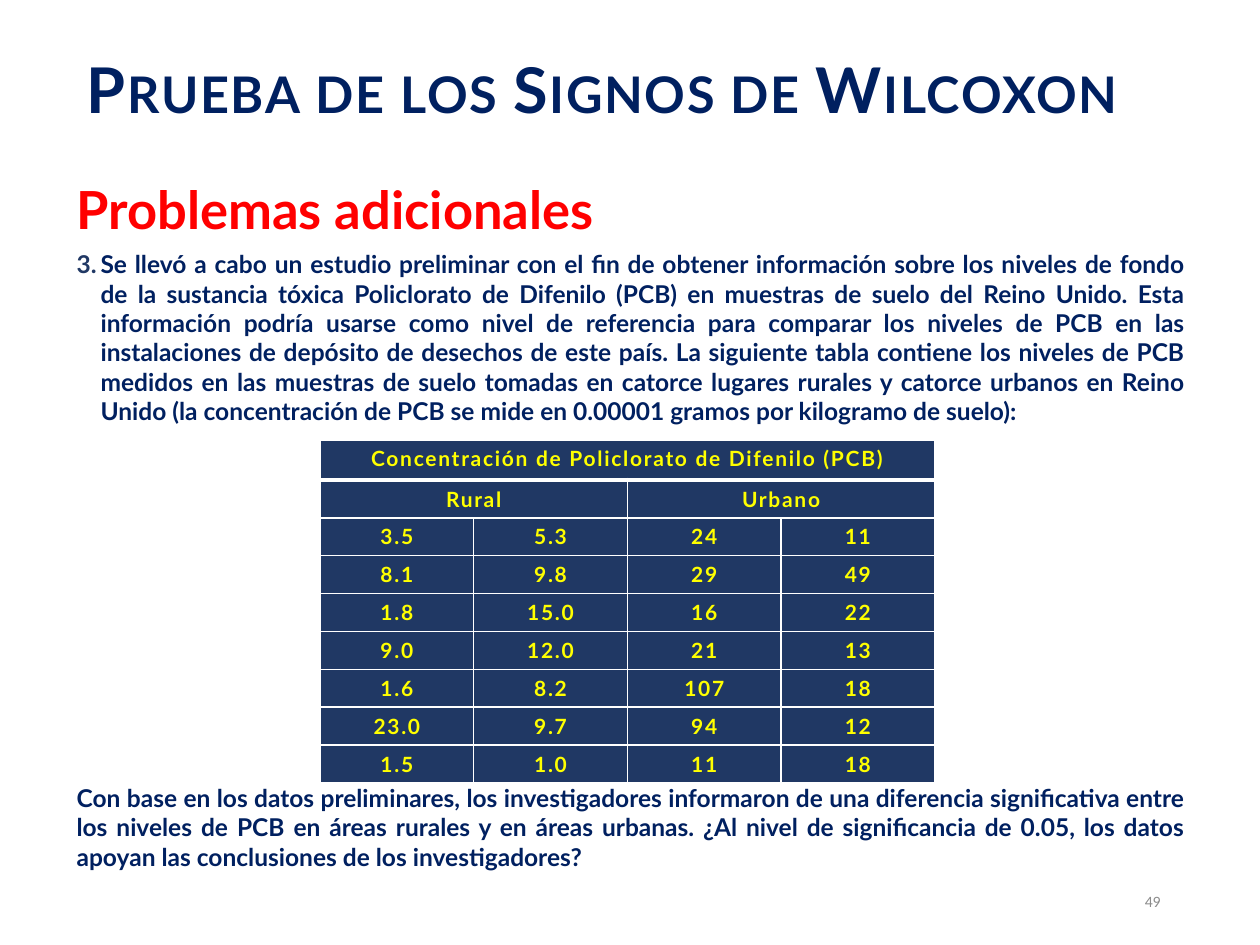
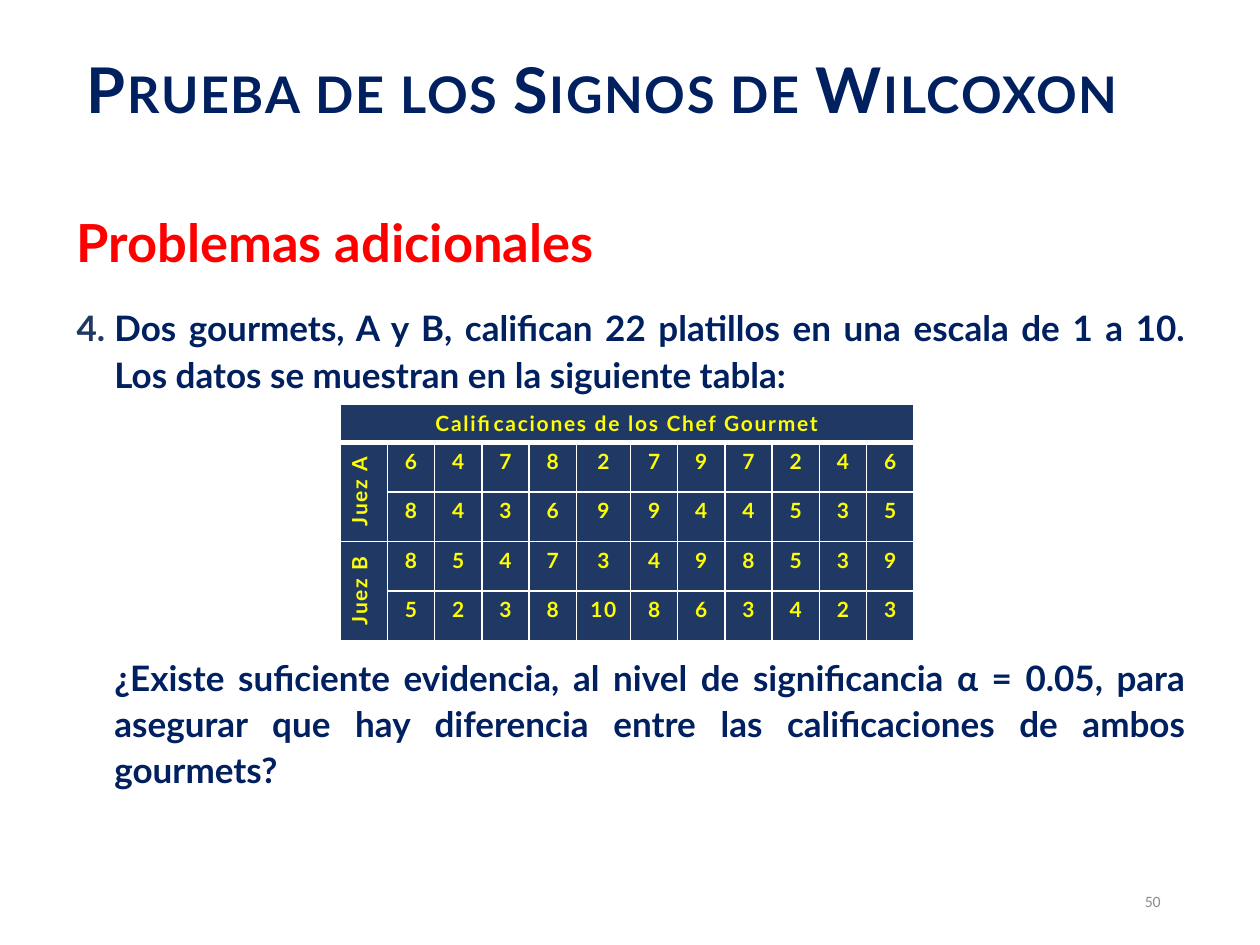
from dataclasses import dataclass

from lxml.etree import SubElement
from pptx import Presentation
from pptx.dml.color import RGBColor
from pptx.enum.text import MSO_ANCHOR, MSO_AUTO_SIZE, PP_ALIGN
from pptx.oxml.ns import qn
from pptx.util import Inches, Pt


@dataclass(frozen=True)
class Theme:
    font: str = "Lato"
    number_font: str = "Calibri"
    navy: str = "002060"
    panel: str = "203864"
    red: str = "FF0000"
    yellow: str = "FFFF00"
    white: str = "FFFFFF"
    grey: str = "8C8C8C"
    title: int = 36
    heading: int = 30
    cell: int = 12
    footer: int = 9
    thin: int = 1
    thick: int = 3


GRID_COLS, GRID_ROWS = 100, 75
TITLE = "Prueba de los Signos de Wilcoxon"
HEADING = "Problemas adicionales"


class Deck:
    """Holds the theme and the current slide; lengths are grid columns and rows."""

    def __init__(self, prs, theme):
        self.prs, self.theme, self.s = prs, theme, None

    def x(self, cols):
        return round(self.prs.slide_width * cols / GRID_COLS)

    def y(self, rows):
        return round(self.prs.slide_height * rows / GRID_ROWS)

    def box(self, left, top, width, height):
        return self.x(left), self.y(top), self.x(width), self.y(height)

    def run(self, p, text, size, color, bold=True, font=None, spacing=None):
        r = p.add_run()
        r.text = text
        r.font.size, r.font.bold = Pt(size), bold
        r.font.name = font or self.theme.font
        r.font.color.rgb = RGBColor.from_string(color)
        if spacing:
            r._r.get_or_add_rPr().set("spc", str(spacing * 100))
        return r

    def line(self, parent, tag, color, width, index=None):
        ln = SubElement(parent, qn(tag), w=str(Pt(width)))
        fill = SubElement(ln, qn("a:solidFill"))
        SubElement(fill, qn("a:srgbClr"), val=color)
        if index is not None:
            parent.insert(index, ln)

    # Slide with its title and page number
    def slide(self, number):
        t = self.theme
        self.s = self.prs.slides.add_slide(self.prs.slide_layouts[5])
        sp = self.s.shapes.title
        sp.left, sp.top, sp.width, sp.height = self.box(5, 2.6, 90, 8.9)
        tf = sp.text_frame
        tf.auto_size, tf.vertical_anchor = MSO_AUTO_SIZE.NONE, MSO_ANCHOR.MIDDLE
        p = tf.paragraphs[0]
        p.alignment = PP_ALIGN.CENTER
        rPr = self.run(p, TITLE, t.title, t.navy, spacing=1)._r.get_or_add_rPr()
        rPr.set("cap", "small")
        self.line(rPr, "a:ln", t.navy, 0.75, 0)

        tf = self.text_box(66.2, 69.5, 26.9, 4)
        tf.vertical_anchor = MSO_ANCHOR.MIDDLE
        p = tf.paragraphs[0]
        p.alignment = PP_ALIGN.RIGHT
        self.run(p, str(number), t.footer, t.grey, False, t.number_font)

    def text_box(self, *place):
        tf = self.s.shapes.add_textbox(*self.box(*place)).text_frame
        tf.word_wrap = True
        return tf

    # Body: red heading, then the problem, then the question below the table
    def body(self, top, height):
        tf = self.text_box(5.1, top, 90, height)
        p = tf.paragraphs[0]
        p.alignment = PP_ALIGN.JUSTIFY
        self.run(p, HEADING, self.theme.heading, self.theme.red)
        return tf

    def paragraph(self, tf, text, size, before, spacing=1.0, indent=0, number=None):
        p = tf.add_paragraph()
        p.alignment = PP_ALIGN.JUSTIFY
        p.space_before, p.line_spacing = Pt(before), spacing
        self.run(p, text, size, self.theme.navy)
        pPr = p._p.get_or_add_pPr()
        pPr.set("marL", str(self.x(indent)))
        if number:
            pPr.set("indent", str(-self.x(indent)))
            color = SubElement(pPr, qn("a:buClr"))
            SubElement(color, qn("a:srgbClr"), val=self.theme.panel)
            SubElement(pPr, qn("a:buAutoNum"), type="arabicPeriod", startAt=str(number))

    # Table: cells holding None are covered by a merge
    def table(self, left, top, widths, heights, rows, merges):
        t = self.theme
        frame = self.s.shapes.add_table(
            len(rows), len(widths), *self.box(left, top, sum(widths), sum(heights)))
        tbl = frame.table
        tbl.first_row = tbl.horz_banding = False
        for col, width in zip(tbl.columns, widths):
            col.width = self.x(width)
        for row, height in zip(tbl.rows, heights):
            row.height = self.y(height)
        for (r0, c0), (r1, c1) in merges:
            tbl.cell(r0, c0).merge(tbl.cell(r1, c1))
        for i, row in enumerate(rows):
            for j, value in enumerate(row):
                self.cell(tbl.cell(i, j), value, i)
        return tbl

    def cell(self, cell, value, row):
        t = self.theme
        if value is not None:
            p = cell.text_frame.paragraphs[0]
            p.alignment = PP_ALIGN.CENTER
            self.run(p, str(value), t.cell, t.yellow, spacing=1)
        tcPr = cell._tc.get_or_add_tcPr()
        for side in "LRTB":
            thick = (row, side) in ((0, "B"), (1, "T"))
            self.line(tcPr, f"a:ln{side}", t.white, t.thick if thick else t.thin)
        cell.fill.solid()
        cell.fill.fore_color.rgb = RGBColor.from_string(t.panel)


def pcb_slide(deck):
    deck.slide(49)
    tf = deck.body(13.6, 56.7)
    deck.paragraph(
        tf, "Se llevó a cabo un estudio preliminar con el fin de obtener información "
        "sobre los niveles de fondo de la sustancia tóxica Policlorato de Difenilo (PCB) "
        "en muestras de suelo del Reino Unido. Esta información podría usarse como nivel "
        "de referencia para comparar los niveles de PCB en las instalaciones de depósito "
        "de desechos de este país. La siguiente tabla contiene los niveles de PCB medidos "
        "en las muestras de suelo tomadas en catorce lugares rurales y catorce urbanos en "
        "Reino Unido (la concentración de PCB se mide en 0.00001 gramos por kilogramo de "
        "suelo):", 14, before=5, indent=1.9, number=3)
    deck.paragraph(
        tf, "Con base en los datos preliminares, los investigadores informaron de una "
        "diferencia significativa entre los niveles de PCB en áreas rurales y en áreas "
        "urbanas. ¿Al nivel de significancia de 0.05, los datos apoyan las conclusiones "
        "de los investigadores?", 14, before=204)
    rows = [
        ["Concentración de Policlorato de Difenilo (PCB)", None, None, None],
        ["Rural", None, "Urbano", None],
        ["3.5", "5.3", 24, 11],
        ["8.1", "9.8", 29, 49],
        ["1.8", "15.0", 16, 22],
        ["9.0", "12.0", 21, 13],
        ["1.6", "8.2", 107, 18],
        ["23.0", "9.7", 94, 12],
        ["1.5", "1.0", 11, 18],
    ]
    deck.table(25.4, 34.9, [12.2] * 4, [3.2] + [3] * 8, rows,
               [((0, 0), (0, 3)), ((1, 0), (1, 1)), ((1, 2), (1, 3))])


def gourmet_slide(deck):
    deck.slide(50)
    tf = deck.body(16.2, 48.3)
    deck.paragraph(
        tf, "Dos gourmets, A y B, califican 22 platillos en una escala de 1 a 10. Los "
        "datos se muestran en la siguiente tabla:", 20, before=16.8, spacing=1.1,
        indent=3, number=4)
    deck.paragraph(
        tf, "¿Existe suficiente evidencia, al nivel de significancia α = 0.05, para "
        "asegurar que hay diferencia entre las calificaciones de ambos gourmets?",
        20, before=147, spacing=1.1, indent=3)
    rows = [
        ["Calificaciones de los Chef Gourmet"] + [None] * 11,
        ["Juez A", 6, 4, 7, 8, 2, 7, 9, 7, 2, 4, 6],
        [None, 8, 4, 3, 6, 9, 9, 4, 4, 5, 3, 5],
        ["Juez B", 8, 5, 4, 7, 3, 4, 9, 8, 5, 3, 9],
        [None, 5, 2, 3, 8, 10, 8, 6, 3, 4, 2, 3],
    ]
    widths = [3.75] * 5 + [4.3] + [3.75] * 6
    tbl = deck.table(27, 32.1, widths, [3] + [3.93] * 4, rows,
                     [((0, 0), (0, 11)), ((1, 0), (2, 0)), ((3, 0), (4, 0))])
    # Judges' names read upwards
    for row in (1, 3):
        tbl.cell(row, 0)._tc.get_or_add_tcPr().set("vert", "vert270")
    tbl.cell(1, 0).vertical_anchor = MSO_ANCHOR.MIDDLE


def main():
    prs = Presentation()
    prs.slide_width, prs.slide_height = Inches(10), Inches(7.5)
    deck = Deck(prs, Theme())
    pcb_slide(deck)
    gourmet_slide(deck)
    prs.save("out.pptx")


if __name__ == "__main__":
    main()
